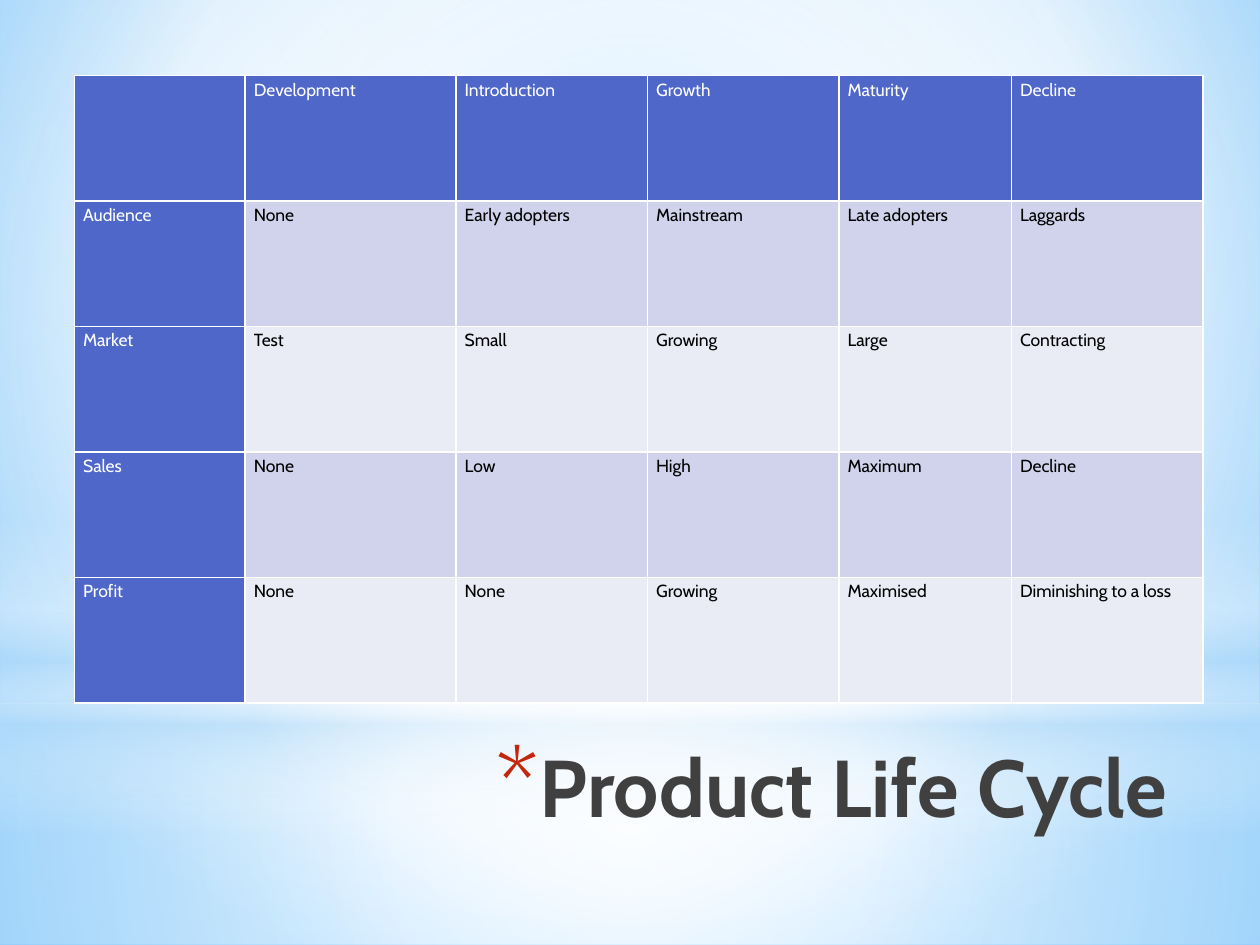
from lxml.etree import SubElement
from pptx import Presentation
from pptx.dml.color import RGBColor
from pptx.enum.shapes import MSO_SHAPE as Shape
from pptx.enum.text import MSO_ANCHOR as Anchor, PP_ALIGN as Align
from pptx.oxml import parse_xml
from pptx.oxml.ns import nsdecls, qn
from pptx.util import Pt

FONT = "Cabin"
TITLE = "Product Life Cycle"
ROWS = [
    ["", "Development", "Introduction", "Growth", "Maturity", "Decline"],
    ["Audience", "None", "Early adopters", "Mainstream", "Late adopters", "Laggards"],
    ["Market", "Test", "Small", "Growing", "Large", "Contracting"],
    ["Sales", "None", "Low", "High", "Maximum", "Decline"],
    ["Profit", "None", "None", "Growing", "Maximised", "Diminishing to a loss"],
]
COLUMN_WIDTHS = [97.6, 120.5, 109.4, 109.4, 98.6, 109.4]
ROW_HEIGHT = 71.7
HEADING_FILL = "4E67C8"
BAND_FILLS = ["E9EBF5", "D0D3EB"]

CENTRE = (50, 50, 50, 50)
BACKGROUND = [(0, "9ED5FF", 100), (60, "FFFFFF", 100), (100, "5BB9FF", 100)]
BACKGROUND_FOCUS = (20, 10, 20, 60)
GLOWS = [
    (Shape.RECTANGLE, 401.8, 138.2, CENTRE,
     [(0, "FFFFFF", 91), (37, "FFFFFF", 76), (100, "B4DCFA", 79)]),
    (Shape.RECTANGLE, 0, 401.8, CENTRE,
     [(0, "FFFFFF", 89), (48, "FFFFFF", 62), (100, "B4DCFA", 79)]),
    (Shape.RECTANGLE, 296.6, 180, None,
     [(0, "FFFFFF", 0), (29, "FFFFFF", 30), (45, "B4DCFA", 40),
      (55, "FFFFFF", 26), (65, "B4DCFA", 60), (100, "FFFFFF", 0)]),
    (Shape.OVAL, 126, 401.8, CENTRE, [(0, "FFFFFF", 100), (56, "FFFFFF", 0)]),
]


def color(value):
    return RGBColor.from_string(value)


def set_gradient(properties, stops, focus):
    stop_xml = "".join(
        f'<a:gs pos="{position * 1000}"><a:srgbClr val="{value}">'
        f'<a:alpha val="{opacity * 1000}"/></a:srgbClr></a:gs>'
        for position, value, opacity in stops)
    if focus:
        left, top, right, bottom = (side * 1000 for side in focus)
        direction = (f'<a:path path="circle"><a:fillToRect l="{left}" t="{top}" '
                     f'r="{right}" b="{bottom}"/></a:path>')
    else:
        direction = '<a:lin ang="5400000" scaled="0"/>'
    gradient = parse_xml(f'<a:gradFill {nsdecls("a")} rotWithShape="1">'
                         f'<a:gsLst>{stop_xml}</a:gsLst>{direction}</a:gradFill>')
    solid = properties.find(qn("a:solidFill"))
    properties.replace(solid, gradient)


def add_backdrop(slide, width):
    slide.background.fill.solid()
    background = next(slide.element.iter(qn("p:bgPr")))
    set_gradient(background, BACKGROUND, BACKGROUND_FOCUS)
    for kind, top, height, focus, stops in GLOWS:
        shape = slide.shapes.add_shape(kind, 0, Pt(top), width, Pt(height))
        shape.shadow.inherit = False
        shape.line.fill.background()
        shape.fill.solid()
        set_gradient(shape.element.spPr, stops, focus)


def format_title(title):
    title.left, title.top, title.width, title.height = Pt(161.3), Pt(417.6), Pt(512.6), Pt(90)
    frame = title.text_frame
    frame.text = TITLE
    frame.word_wrap = True
    frame.vertical_anchor = Anchor.TOP
    paragraph = frame.paragraphs[0]
    paragraph.alignment = Align.RIGHT
    font = paragraph.font
    font.name, font.size, font.bold = FONT, Pt(46), True
    font.color.rgb = color("404040")
    properties = paragraph._p.get_or_add_pPr()
    properties.set("marL", str(Pt(25.2)))
    properties.set("indent", str(Pt(-25.2)))
    bullet = [
        '<a:buClr {}><a:srgbClr val="C3260C"/></a:buClr>',
        '<a:buSzPct {} val="128000"/>',
        '<a:buFont {} typeface="Cabin"/>',
        '<a:buChar {} char="*"/>',
    ]
    for index, xml in enumerate(bullet):
        properties.insert(index, parse_xml(xml.format(nsdecls("a"))))
    title.element.getparent().append(title.element)


def add_borders(cell):
    properties = cell._tc.get_or_add_tcPr()
    for side in ("lnL", "lnR", "lnT", "lnB"):
        line = SubElement(properties, qn(f"a:{side}"), w=str(Pt(1)))
        fill = SubElement(line, qn("a:solidFill"))
        SubElement(fill, qn("a:srgbClr"), val="FFFFFF")


def format_cell(cell, text, fill, text_color):
    add_borders(cell)
    cell.fill.solid()
    cell.fill.fore_color.rgb = color(fill)
    cell.margin_left = cell.margin_right = Pt(5)
    cell.margin_top = cell.margin_bottom = 0
    cell.text = text
    paragraph = cell.text_frame.paragraphs[0]
    paragraph.line_spacing = Pt(14.2)
    font = paragraph.font
    font.name, font.size, font.bold = FONT, Pt(10), False
    font.color.rgb = color(text_color)


def add_stage_table(slide):
    frame = slide.shapes.add_table(len(ROWS), len(COLUMN_WIDTHS), Pt(42.5), Pt(43.2),
                                   Pt(sum(COLUMN_WIDTHS)), Pt(ROW_HEIGHT * len(ROWS)))
    table = frame.table
    for column, width in zip(table.columns, COLUMN_WIDTHS):
        column.width = Pt(width)
    for row_index, texts in enumerate(ROWS):
        table.rows[row_index].height = Pt(ROW_HEIGHT)
        for column_index, text in enumerate(texts):
            heading = row_index == 0 or column_index == 0
            fill = HEADING_FILL if heading else BAND_FILLS[row_index % 2]
            format_cell(table.cell(row_index, column_index), text, fill,
                        "FFFFFF" if heading else "000000")


def main():
    presentation = Presentation()
    presentation.slide_width, presentation.slide_height = Pt(720), Pt(540)
    slide = presentation.slides.add_slide(presentation.slide_layouts[5])
    add_backdrop(slide, presentation.slide_width)
    format_title(slide.shapes.title)
    add_stage_table(slide)
    presentation.save("out.pptx")


if __name__ == "__main__":
    main()
